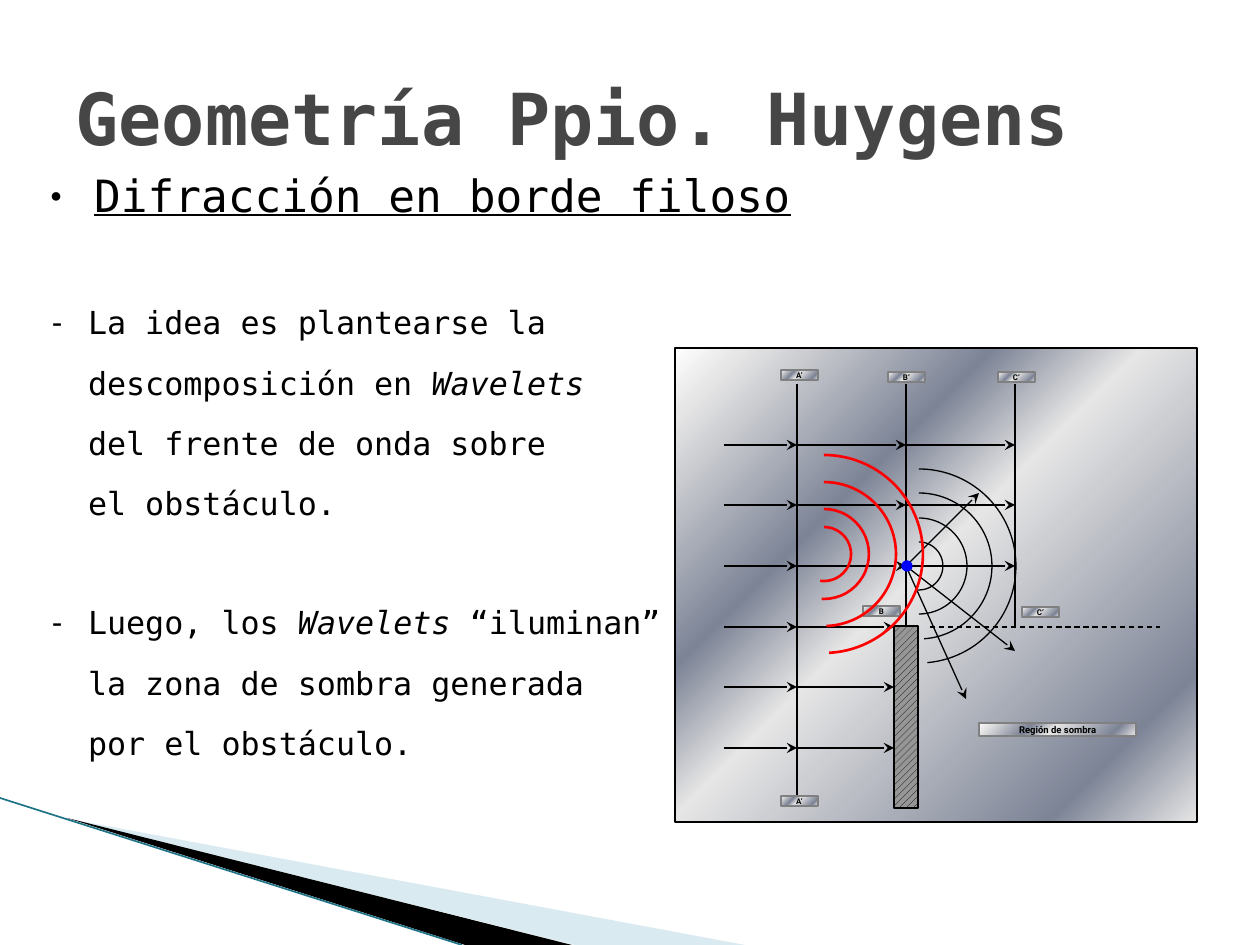
from itertools import pairwise

from lxml import etree
from pptx import Presentation
from pptx.dml.color import RGBColor
from pptx.enum.dml import MSO_LINE, MSO_PATTERN
from pptx.enum.shapes import MSO_CONNECTOR, MSO_SHAPE
from pptx.enum.text import MSO_ANCHOR, MSO_AUTO_SIZE, PP_ALIGN
from pptx.oxml.ns import qn
from pptx.util import Pt

RECT, OVAL, ARC = MSO_SHAPE.RECTANGLE, MSO_SHAPE.OVAL, MSO_SHAPE.ARC
LINE, DASH = MSO_CONNECTOR.STRAIGHT, MSO_LINE.DASH
HATCH = MSO_PATTERN.WIDE_UPWARD_DIAGONAL
MID, TOP = MSO_ANCHOR.MIDDLE, MSO_ANCHOR.TOP
LEFT, MIDDLE = PP_ALIGN.LEFT, PP_ALIGN.CENTER
FIXED = MSO_AUTO_SIZE.NONE
UNIT = 914400 / 126
MONO, SANS = "DejaVu Sans Mono", "Roboto"
HUES = {"ink": "000000", "title": "464646", "edge": "808080", "wall": "969696",
        "red": "FF0000", "blue": "0000FF", "pale": "A0CBDC", "teal": "1F7387"}
METAL = [(0, "FFFFFF"), (7, "E6E6E6"), (32, "7D8496"),
         (47, "E6E6E6"), (85, "7D8496"), (100, "E6E6E6")]


def px(*nums):
    return [round(n * UNIT) for n in nums]


def hue(name):
    return RGBColor.from_string(HUES[name])


def node(up, tag, **attrs):
    return etree.SubElement(up, qn("a:" + tag), attrs)


def apply(item, style):
    for key, val in style.items():
        setattr(item, key, val)


def ink(font, name="ink", **style):
    apply(font, style)
    font.color.rgb = hue(name)


def paint(shape, name):
    shape.fill.solid()
    shape.fill.fore_color.rgb = hue(name)


def edge(shape, name, width):
    shape.line.color.rgb = hue(name)
    shape.line.width = Pt(width)


def draw(slide, kind, box):
    shape = slide.shapes.add_shape(kind, *px(*box))
    shape.shadow.inherit = False
    return shape


def metal(shape):
    shape.fill.gradient()
    grad = shape._element.spPr.find(qn("a:gradFill"))
    for kid in list(grad):
        grad.remove(kid)
    stops = node(grad, "gsLst")
    for spot, code in METAL:
        node(node(stops, "gs", pos=str(spot * 1000)), "srgbClr", val=code)
    node(grad, "lin", ang="2700000", scaled="0")


def link(slide, start, end, width=0.75, name="ink", head=False, dash=None):
    conn = slide.shapes.add_connector(LINE, *px(*start, *end))
    edge(conn, name, width)
    if dash:
        conn.line.dash_style = dash
    if head:
        node(conn.line._get_or_add_ln(), "tailEnd", type="stealth")
    node(conn._element.spPr, "effectLst")
    return conn


def waves(slide, mid, sizes, ends, name, width):
    x, y = mid
    for size, end in zip(sizes, ends):
        arc = draw(slide, ARC, (x - size, y - size, 2 * size, 2 * size))
        arc.adjustments[0] = 270 * 0.6
        arc.adjustments[1] = end * 0.6
        arc.fill.background()
        edge(arc, name, width)


def label(slide, box, text, size):
    shape = draw(slide, RECT, box)
    metal(shape)
    edge(shape, "edge", 0.75)
    frame = shape.text_frame
    apply(frame, dict(margin_left=0, margin_right=0, margin_top=0,
                      margin_bottom=0, vertical_anchor=MID, word_wrap=True))
    para = frame.paragraphs[0]
    para.alignment = MIDDLE
    run = para.add_run()
    run.text = text
    ink(run.font, name=SANS_STYLE["hue"], size=Pt(size), bold=True)
    run.font.name = SANS


SANS_STYLE = {"hue": "ink"}


def swoosh(slide, box):
    x, y, w, h = box
    low = y + h
    wings = [("pale", [(x + 69, y + 21), (x + 745, low), (x + 575, low)]),
             ("ink", [(x + 67, y + 20), (x + 572, low), (x + 465, low)])]
    for name, spots in wings:
        form = slide.shapes.build_freeform(*spots[0], scale=UNIT)
        form.add_line_segments(spots[1:])
        wing = form.convert_to_shape()
        wing.shadow.inherit = False
        paint(wing, name)
        wing.line.fill.background()
        if name == "pale":
            tint = wing._element.spPr.find(".//" + qn("a:srgbClr"))
            node(tint, "alpha", val="40000")
    link(slide, (x, y), (x + 462, low), 0.95, "teal")


def place(holder, box):
    apply(holder, dict(zip(("left", "top", "width", "height"), px(*box))))


def head(slide, box):
    title = slide.shapes.title
    place(title, box)
    apply(title.text_frame, dict(vertical_anchor=MID, auto_size=FIXED))
    para = title.text_frame.paragraphs[0]
    para.alignment = LEFT
    run = para.add_run()
    run.text = "Geometría Ppio. Huygens"
    ink(run.font, "title", size=Pt(41), bold=True)
    run.font.name = MONO


def row(para, parts, size, indent, mark=None, scale=100, gap=0, under=False):
    props = para._p.get_or_add_pPr()
    left, hang = px(*indent)
    props.set("marL", str(left))
    props.set("indent", str(-hang))
    if mark:
        node(props, "buSzPct", val=str(scale * 1000))
        node(props, "buChar", char=mark)
    else:
        node(props, "buNone")
    apply(para, dict(alignment=LEFT, line_spacing=0.93,
                     space_before=Pt(gap), space_after=Pt(14.2)))
    for part in parts:
        run = para.add_run()
        run.text = part
        ink(run.font, size=Pt(size), underline=under,
            italic=part.startswith("Wavelets"))
        run.font.name = MONO


def notes(slide, box):
    body = slide.placeholders[1]
    place(body, box)
    frame = body.text_frame
    apply(frame, dict(margin_left=0, margin_right=0, margin_top=0, margin_bottom=0,
                      vertical_anchor=TOP, auto_size=FIXED, word_wrap=True))
    row(frame.paragraphs[0], ["Difracción en borde filoso"], 25.4, (59, 44),
        "●", 45, under=True)
    groups = [
        [["La idea es plantearse la"], ["descomposición en ", "Wavelets"],
         ["del frente de onda sobre"], ["el obstáculo."]],
        [["Luego, los ", "Wavelets ", "“iluminan”"],
         ["la zona de sombra generada"], ["por el obstáculo."]]]
    for group in groups:
        for i, parts in enumerate(group):
            first = i == 0
            row(frame.add_paragraph(), parts, 18.1, (53, 36 if first else 0),
                "-" if first else None, gap=33.8 if first else 0)


def panel(slide, box):
    x, y, w, h = box

    def at(a, b):
        return x + a, y + b

    back = draw(slide, RECT, box)
    metal(back)
    edge(back, "ink", 1)
    wall = draw(slide, RECT, (*at(219, 278), 24, 182))
    wall.fill.patterned()
    wall.fill.pattern = HATCH
    wall.fill.fore_color.rgb = hue("ink")
    wall.fill.back_color.rgb = hue("wall")
    edge(wall, "ink", 1.5)

    rows = [36, 97, 157, 218, 279, 339, 400, 448]
    first, second, third = 122, 231, 340
    for col, count in ((first, 8), (second, 5), (third, 5)):
        for up, low in pairwise(rows[:count]):
            conn = link(slide, at(col, up), at(col, low), 1.25)
        if col == second:
            conn.end_connect(wall, 0)
    for i, level in enumerate(rows[1:-1]):
        stops = [49, first, second, third] if i < 3 else [49, first, 219]
        for a, b in pairwise(stops):
            link(slide, at(a, level), at(b, level), head=True)

    waves(slide, at(244, 218), [24, 48, 73, 97], [92, 90, 86, 85], "ink", 0.75)
    for tip in ((304, 145), (340, 303), (291, 351)):
        link(slide, at(second, 218), at(*tip), head=True)
    dot = draw(slide, OVAL, (*at(227, 213), 10, 10))
    paint(dot, "blue")
    edge(dot, "blue", 0.75)
    link(slide, at(255, 279), at(485, 279), dash=DASH)

    label(slide, (*at(304, 375), 157, 13), "Región de sombra", 5.4)
    for a, b, text in ((106, 22, "A’"), (213, 24, "B’"), (323, 24, "C’"),
                       (188, 258, "B"), (347, 259, "C’"), (106, 448, "A’")):
        label(slide, (*at(a, b), 37, 10), text, 4.5)
    waves(slide, at(149, 206), [27, 45, 72, 99], [98, 93, 88, 87], "red", 1.5)


def main():
    deck = Presentation()
    deck.slide_width, deck.slide_height = px(1260, 945)
    slide = deck.slides.add_slide(deck.slide_layouts[1])
    swoosh(slide, (0, 798, 745, 147))
    head(slide, (63, 38, 1134, 157))
    notes(slide, (35, 173, 971, 600))
    panel(slide, (675, 348, 522, 474))
    deck.save("out.pptx")


if __name__ == "__main__":
    main()
